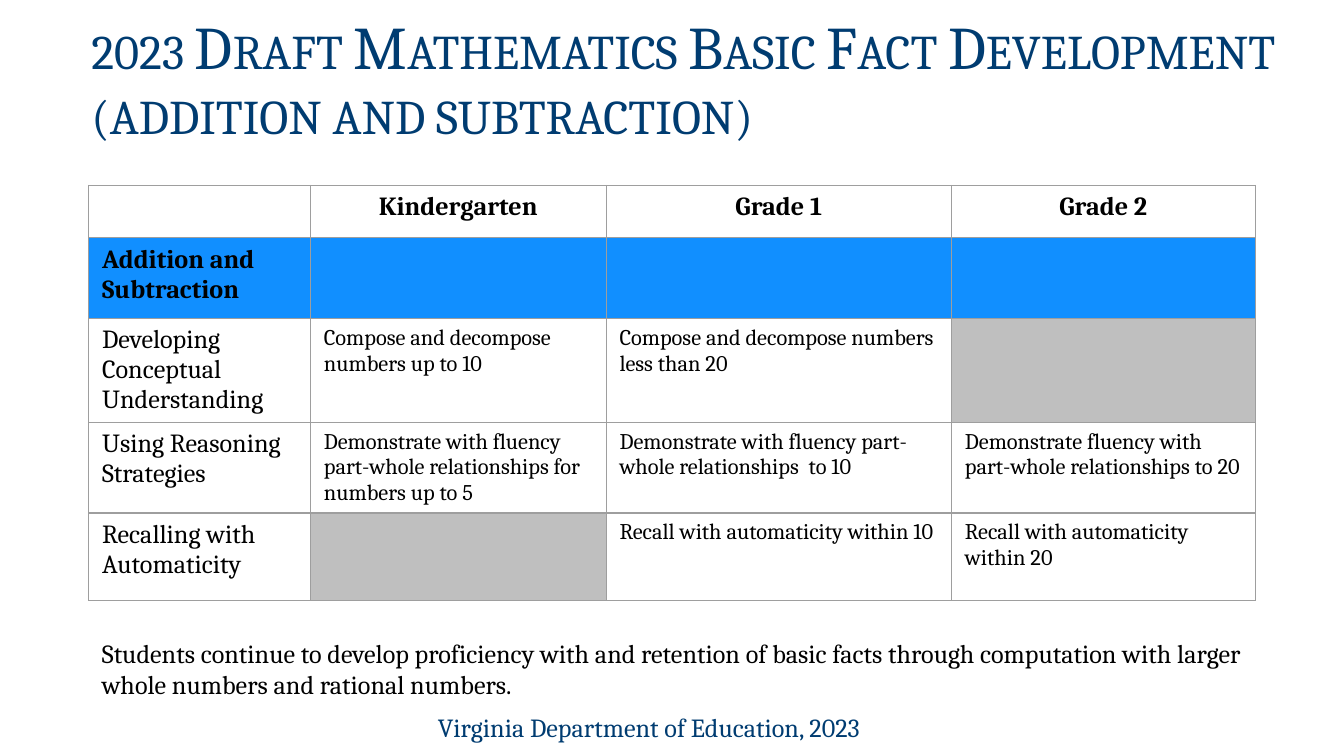
"""Build a slide on basic fact development in addition and subtraction."""
from lxml import etree
from pptx import Presentation
from pptx.dml.color import RGBColor
from pptx.enum.text import MSO_ANCHOR, MSO_AUTO_SIZE, PP_ALIGN
from pptx.oxml.ns import qn
from pptx.util import Inches, Pt

BOTTOM = MSO_ANCHOR.BOTTOM
NO_FIT = MSO_AUTO_SIZE.NONE
LEFT, CENTER = PP_ALIGN.LEFT, PP_ALIGN.CENTER
TITLE_ONLY = 5

FONT = "Cambria"
NAVY, BLACK, BLUE, GRAY, BORDER = "003C71", "000000", "118FFF", "BFBFBF", "9E9E9E"
MARGIN, CONTENT_WIDTH = 0.66, 8.69

COLUMN_WIDTHS = [1.65, 2.2, 2.57, 2.26]
ROW_HEIGHTS = [0.39, 0.6, 0.75, 0.57, 0.65]
ROWS = [
    ["", "Kindergarten", "Grade 1", "Grade 2"],
    ["Addition and Subtraction", "", "", ""],
    ["Developing Conceptual Understanding",
     "Compose and decompose numbers up to 10",
     "Compose and decompose numbers less than 20", ""],
    ["Using Reasoning Strategies",
     "Demonstrate with fluency part-whole relationships for numbers up to 5",
     "Demonstrate with fluency part-whole relationships  to 10",
     "Demonstrate fluency with part-whole relationships to 20"],
    ["Recalling with Automaticity", "",
     "Recall with automaticity within 10",
     "Recall with automaticity within 20"],
]


def color(value):
    """Return the colour for a hex string."""
    return RGBColor.from_string(value)


def write(frame, text, size, ink, bold=False, align=LEFT):
    """Put one formatted paragraph in a text frame and return it."""
    frame.text = text
    para = frame.paragraphs[0]
    para.alignment = align
    for span in para.runs:
        span.font.name = FONT
        span.font.size = Pt(size)
        span.font.bold = bold
        span.font.color.rgb = color(ink)
    return para


def set_insets(frame, left, top, right, bottom):
    """Set the inner margins of a text frame in inches."""
    frame.margin_left, frame.margin_top = Inches(left), Inches(top)
    frame.margin_right, frame.margin_bottom = Inches(right), Inches(bottom)


def set_title(slide, text):
    """Place the title in small capitals."""
    title = slide.shapes.title
    title.left, title.top = Inches(0), Inches(-0.31)
    title.width, title.height = Inches(10), Inches(1.45)
    frame = title.text_frame
    frame.auto_size = NO_FIT
    frame.vertical_anchor = BOTTOM
    set_insets(frame, 0.68, 0.04, 0.07, 0.04)
    para = write(frame, text, 32.4, NAVY)
    para.line_spacing = 0.9
    para.runs[0].font._element.set("cap", "small")


def add_text(slide, text, left, top, width, height, ink, inset=0.05):
    """Add a wrapped text box."""
    box = slide.shapes.add_textbox(
        Inches(left), Inches(top), Inches(width), Inches(height))
    box.text_frame.word_wrap = True
    set_insets(box.text_frame, 0.1, inset, 0.1, inset)
    write(box.text_frame, text, 14, ink)


def add_borders(cell):
    """Draw thin lines on all four sides of a cell."""
    properties = cell._tc.get_or_add_tcPr()
    for side in ("lnL", "lnR", "lnT", "lnB"):
        line = etree.SubElement(properties, qn(f"a:{side}"), w=str(Pt(0.75)))
        fill = etree.SubElement(line, qn("a:solidFill"))
        etree.SubElement(fill, qn("a:srgbClr"), val=BORDER)


def format_cell(cell, text, row, column):
    """Fill a cell and write its text according to its place in the grid."""
    add_borders(cell)
    if row == 1:
        shade = BLUE
    else:
        shade = GRAY if row and not text else None
    if shade:
        cell.fill.solid()
        cell.fill.fore_color.rgb = color(shade)
    else:
        cell.fill.background()
    size = 14 if row < 2 or column == 0 else 12
    para = write(cell.text_frame, text, size, BLACK, row < 2,
                 LEFT if row else CENTER)
    if not text:
        etree.SubElement(para._p, qn("a:endParaRPr"), sz=str(size * 100))


def add_fact_table(slide):
    """Add the table of fact development by grade."""
    table = slide.shapes.add_table(
        len(ROWS), len(COLUMN_WIDTHS), Inches(MARGIN), Inches(1.38),
        Inches(CONTENT_WIDTH), Inches(sum(ROW_HEIGHTS))).table
    table.first_row = table.horz_banding = False
    for column, width in zip(table.columns, COLUMN_WIDTHS):
        column.width = Inches(width)
    for row, height in zip(table.rows, ROW_HEIGHTS):
        row.height = Inches(height)
    for row, texts in enumerate(ROWS):
        for column, text in enumerate(texts):
            format_cell(table.cell(row, column), text, row, column)


def main():
    """Build and save the deck."""
    deck = Presentation()
    deck.slide_width = Inches(10)
    deck.slide_height = deck.slide_width * 9 // 16
    slide = deck.slides.add_slide(deck.slide_layouts[TITLE_ONLY])
    set_title(slide, "2023 Draft Mathematics Basic Fact Development "
                     "(addition and subtraction)")
    add_fact_table(slide)
    add_text(slide, "Students continue to develop proficiency with and retention "
                    "of basic facts through computation with larger whole numbers "
                    "and rational numbers.",
             MARGIN, 4.69, CONTENT_WIDTH, 0.57, BLACK)
    add_text(slide, "Virginia Department of Education, 2023",
             3.16, 5.19, 3.9, 0.44, NAVY, inset=0.1)
    deck.save("out.pptx")


if __name__ == "__main__":
    main()
